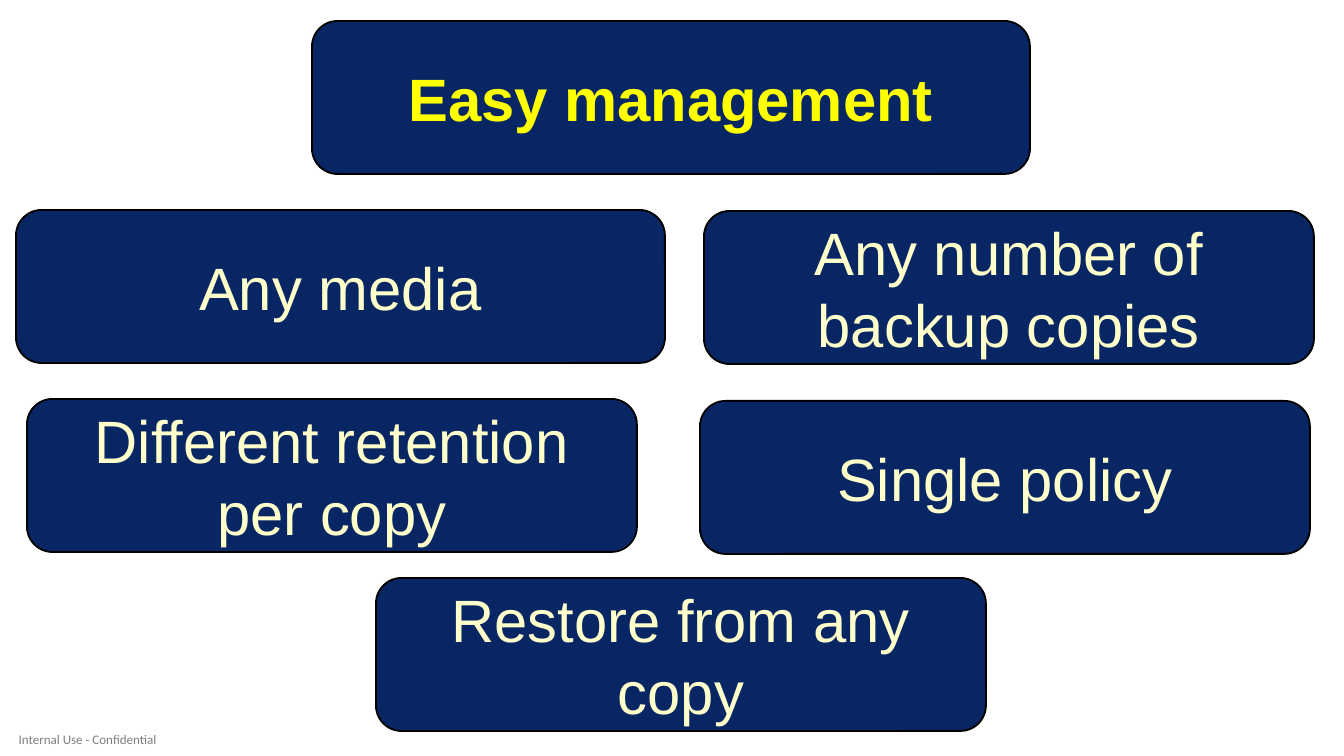
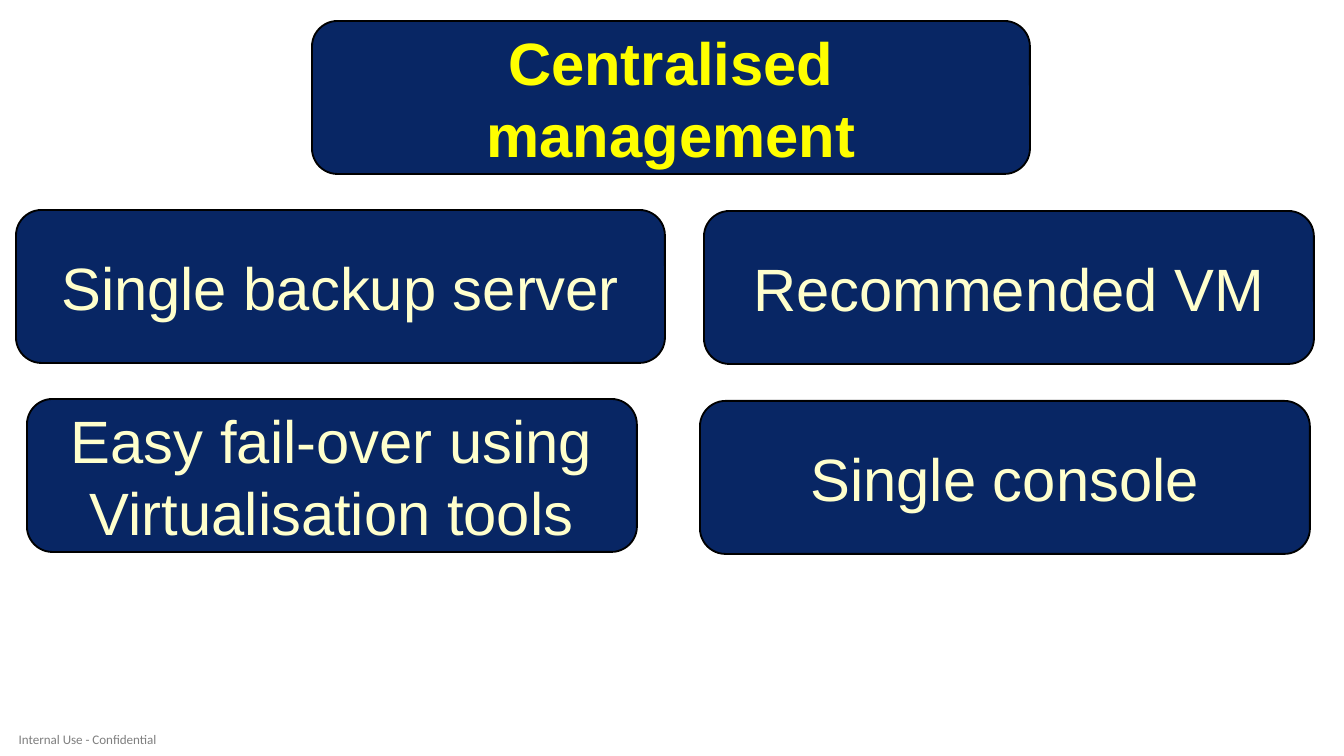
from pptx import Presentation
from pptx.dml.color import RGBColor as RGB
from pptx.enum.shapes import MSO_SHAPE as SHAPE
from pptx.enum.text import MSO_ANCHOR as ANCHOR, MSO_AUTO_SIZE as FIT, PP_ALIGN as ALIGN
from pptx.oxml.ns import qn
from pptx.util import Pt
from lxml.etree import SubElement

SLIDES = [
    ("Easy management", [
        "Any media", "Any number of backup copies",
        "Different retention per copy", "Single policy",
        "Restore from any copy"]),
    ("Centralised management", [
        "Single backup server", "Recommended VM",
        "Easy fail-over using Virtualisation tools", "Single console"]),
]
FOOTER = "Internal Use - Confidential"

NAVY = RGB(0x00, 0x20, 0x60)
BLACK = RGB(0x00, 0x00, 0x00)
YELLOW = RGB(0xFF, 0xFF, 0x00)
CREAM = RGB(0xFF, 0xFF, 0xCC)
GREY = RGB(0x7F, 0x7F, 0x7F)

SCALE = 914400 / 134.4
HIGH = 153
HEAD = (312, 21, 718, HIGH)
SPOTS = [(16, 210, 649, HIGH), (704, 211, 610, HIGH),
         (27, 399, 610, HIGH), (700, 401, 610, HIGH),
         (376, 578, 610, HIGH)]
FOOT = (0, 724, 175, 31)


def scale(area):
    return [round(n * SCALE) for n in area]


def write(shape, text, font="Arial", size=32, color=CREAM, bold=False,
          wrap=True, fit=FIT.NONE):
    frame = shape.text_frame
    frame.text = text
    frame.word_wrap = wrap
    frame.auto_size = fit
    frame.vertical_anchor = ANCHOR.MIDDLE
    para = frame.paragraphs[0]
    para.alignment = ALIGN.CENTER
    face = para.runs[0].font
    face.name, face.size, face.bold = font, Pt(size), bold
    face.color.rgb = color


def panel(slide, area):
    box = slide.shapes.add_shape(SHAPE.ROUNDED_RECTANGLE, *scale(area))
    box.shadow.inherit = False
    box.fill.solid()
    box.fill.fore_color.rgb = NAVY
    tint = box.element.spPr.find(qn("a:solidFill"))[0]
    SubElement(tint, qn("a:alpha")).set("val", "97000")
    box.line.color.rgb = BLACK
    box.line.width = Pt(1)
    return box


def headline(slide, text):
    panel(slide, HEAD)
    title = slide.shapes.title
    title.left, title.top, title.width, title.height = scale(HEAD)
    write(title, text, color=YELLOW, bold=True)
    slide.shapes.element.append(title.element)


def footer(slide):
    note = slide.shapes.add_textbox(*scale(FOOT))
    frame = note.text_frame
    frame.margin_left = frame.margin_right = 0
    frame.margin_top = frame.margin_bottom = 0
    write(note, FOOTER, font="Calibri", size=7, color=GREY,
          wrap=False, fit=FIT.SHAPE_TO_FIT_TEXT)
    slide.slide_layout.shapes.element.append(note.element)


def main():
    deck = Presentation()
    deck.slide_width, deck.slide_height = scale((1344, 756))
    layout = deck.slide_layouts.get_by_name("Title Only")
    for head, points in SLIDES:
        slide = deck.slides.add_slide(layout)
        headline(slide, head)
        for text, area in zip(points, SPOTS):
            write(panel(slide, area), text)
    footer(deck.slides[0])
    deck.save("out.pptx")


if __name__ == "__main__":
    main()
